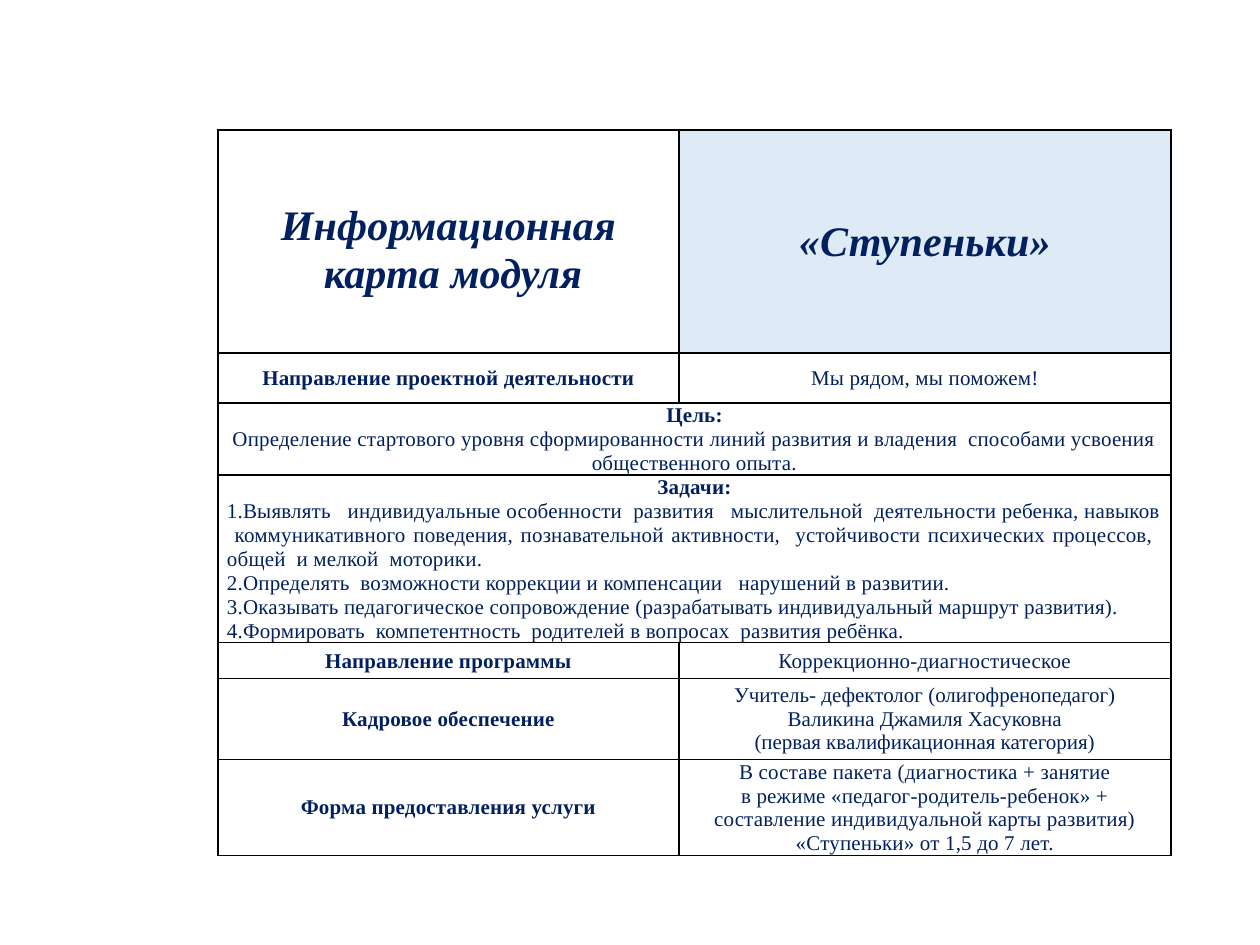
import pptx
import pptx.util
import pptx.dml.color
import pptx.enum.text
from lxml import etree

PX = 914400 // 126
NAVY = pptx.dml.color.RGBColor(0x00, 0x20, 0x60)
PALE = pptx.dml.color.RGBColor(0xDE, 0xEB, 0xF7)
NS = "{http://schemas.openxmlformats.org/drawingml/2006/main}"
ALIGN = pptx.enum.text.PP_ALIGN
ANCHOR = pptx.enum.text.MSO_ANCHOR

COLS = [461, 492]
ROWS = [223, 50, 72, 167, 36, 81, 96]
HEAD = (["Информационная", "карта модуля"], ["«Ступеньки»"])
GOAL = [
    "Цель:",
    "Определение стартового уровня сформированности линий развития и владения  способами усвоения общественного опыта.",
]
TASKS = [
    "Задачи:",
    "1.Выявлять   индивидуальные особенности  развития   мыслительной  деятельности ребенка, навыков  коммуникативного поведения, познавательной активности,  устойчивости психических процессов,  общей  и мелкой  моторики.",
    "2.Определять  возможности коррекции и компенсации   нарушений в развитии.",
    "3.Оказывать педагогическое сопровождение (разрабатывать индивидуальный маршрут развития).",
    "4.Формировать  компетентность  родителей в вопросах  развития ребёнка.",
]
STAFF = [
    "Учитель- дефектолог (олигофренопедагог)",
    "Валикина Джамиля Хасуковна",
    "(первая квалификационная категория)",
]
FORM = [
    "В составе пакета (диагностика + занятие",
    "в режиме «педагог-родитель-ребенок» + составление индивидуальной карты развития) «Ступеньки» от 1,5 до 7 лет.",
]
TEXT = [
    HEAD,
    (["Направление проектной деятельности"], ["Мы рядом, мы поможем!"]),
    (GOAL,),
    (TASKS,),
    (["Направление программы"], ["Коррекционно-диагностическое"]),
    (["Кадровое обеспечение"], STAFF),
    (["Форма предоставления услуги"], FORM),
]


def style(cell):
    """Set the margins, clear the fill and draw a thin black border."""
    cell.margin_left = cell.margin_right = 9 * PX
    cell.margin_top = cell.margin_bottom = 0
    cell.fill.background()
    props = cell._tc.get_or_add_tcPr()
    for i, side in enumerate(["lnL", "lnR", "lnT", "lnB"]):
        line = etree.Element(NS + side, w="12700")
        fill = etree.SubElement(line, NS + "solidFill")
        etree.SubElement(fill, NS + "srgbClr", val="000000")
        props.insert(i, line)


def write(cell, lines, wide, left, head):
    """Fill a cell; left cells and the first line of wide ones are bold."""
    cell.vertical_anchor = ANCHOR.TOP if wide else ANCHOR.MIDDLE
    for i, text in enumerate(lines):
        para = cell.text_frame.paragraphs[0] if i == 0 else cell.text_frame.add_paragraph()
        para.text = text
        para.alignment = ALIGN.JUSTIFY if lines is TASKS and i else ALIGN.CENTER
        props = para._p.get_or_add_pPr()
        props.set("marL", "0")
        props.set("indent", "0" if lines is STAFF else str(-31 * PX))
        if lines is not STAFF:
            para.line_spacing = pptx.util.Pt(13.7)
        font = para.font
        font.name = "Times New Roman"
        font.size = pptx.util.Pt(24 if head else 12)
        font.bold = head or (i == 0 if wide else left)
        font.italic = head
        font.color.rgb = NAVY
        if lines is not STAFF:
            font._rPr.set("spc", "10")


deck = pptx.Presentation()
deck.slide_width = 1260 * PX
deck.slide_height = 945 * PX
slide = deck.slides.add_slide(deck.slide_layouts[6])

frame = slide.shapes.add_table(
    len(ROWS), len(COLS), 218 * PX, 130 * PX, sum(COLS) * PX, sum(ROWS) * PX)
table = frame.table
table.first_row = False
table.horz_banding = False
for col, width in zip(table.columns, COLS):
    col.width = width * PX
for row, height in zip(table.rows, ROWS):
    row.height = height * PX

for r, parts in enumerate(TEXT):
    wide = len(parts) == 1
    for c in range(len(COLS)):
        style(table.cell(r, c))
    if wide:
        table.cell(r, 0).merge(table.cell(r, 1))
    for c, lines in enumerate(parts):
        write(table.cell(r, c), lines, wide, c == 0, r == 0)

# Place the two titles within the tall first row
title, name = table.cell(0, 0), table.cell(0, 1)
title.vertical_anchor = ANCHOR.TOP
title.margin_top = 96 * PX
second = title.text_frame.paragraphs[1]
second.space_before = pptx.util.Pt(13.7)
second._p.get_or_add_pPr().set("marL", str(9 * PX))
second._p.get_or_add_pPr().set("indent", "0")
name.margin_top = 24 * PX
name.fill.solid()
name.fill.fore_color.rgb = PALE

deck.save("out.pptx")
